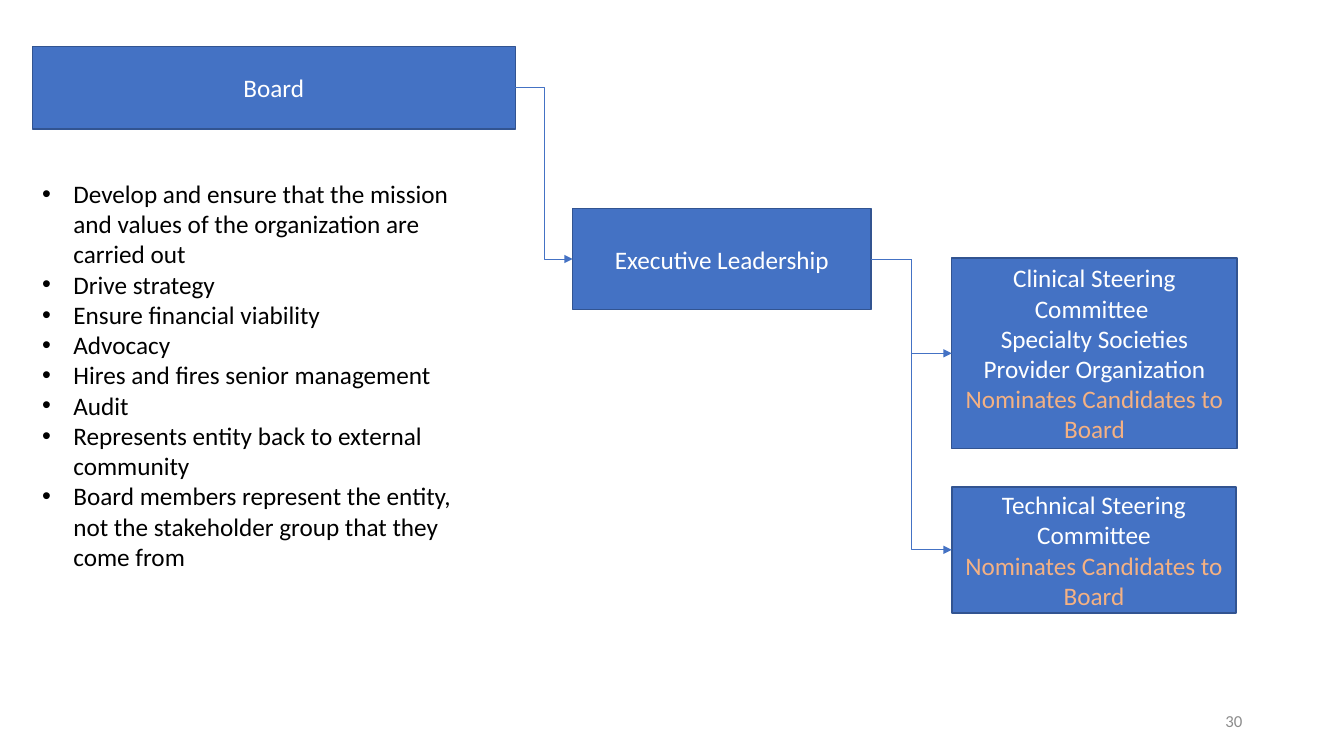
"""Builds a governance slide: board duties, executive leadership and committees."""
from lxml import etree
from pptx import Presentation
from pptx.dml.color import RGBColor
from pptx.enum.shapes import MSO_CONNECTOR, MSO_SHAPE
from pptx.enum.text import MSO_ANCHOR, PP_ALIGN
from pptx.oxml.ns import qn
from pptx.util import Inches, Pt

RECTANGLE = MSO_SHAPE.RECTANGLE
ELBOW = MSO_CONNECTOR.ELBOW
TOP, MIDDLE = MSO_ANCHOR.TOP, MSO_ANCHOR.MIDDLE
LEFT, CENTER, RIGHT = PP_ALIGN.LEFT, PP_ALIGN.CENTER, PP_ALIGN.RIGHT
LEFT_SITE, RIGHT_SITE = 1, 3

COLORS = {
    "box": "4472C4",
    "border": "325491",
    "label": "FFFFFF",
    "nomination": "F4B183",
    "body": "000000",
    "number": "8C8C8C",
}

NOMINATION = ("Nominates Candidates to Board", "nomination")

DUTIES = [
    "Develop and ensure that the mission and values of the organization are carried out",
    "Drive strategy",
    "Ensure financial viability",
    "Advocacy",
    "Hires and fires senior management",
    "Audit",
    "Represents entity back to external community",
    "Board members represent the entity, not the stakeholder group that they come from",
]


class SlideBuilder:
    def __init__(self, slide, font="Calibri", size=18):
        self.slide = slide
        self.font = font
        self.size = size

    def color(self, name):
        return RGBColor.from_string(COLORS[name])

    def add_lines(self, shape, lines, align, anchor, size=None, bullet=False):
        frame = shape.text_frame
        frame.word_wrap = True
        frame.vertical_anchor = anchor
        for index, (text, color) in enumerate(lines):
            paragraph = frame.add_paragraph() if index else frame.paragraphs[0]
            paragraph.alignment = align
            if bullet:
                self.add_bullet(paragraph)
            run = paragraph.add_run()
            run.text = text
            run.font.name = self.font
            run.font.size = Pt(size or self.size)
            run.font.color.rgb = self.color(color)

    def add_bullet(self, paragraph, indent=0.31):
        properties = paragraph._p.get_or_add_pPr()
        properties.set("marL", str(Inches(indent)))
        properties.set("indent", str(-Inches(indent)))
        etree.SubElement(properties, qn("a:buFont")).set("typeface", "Arial")
        etree.SubElement(properties, qn("a:buChar")).set("char", "•")

    def box(self, left, top, width, height, lines):
        shape = self.slide.shapes.add_shape(
            RECTANGLE, Inches(left), Inches(top), Inches(width), Inches(height))
        shape.shadow.inherit = False
        shape.fill.solid()
        shape.fill.fore_color.rgb = self.color("box")
        shape.line.color.rgb = self.color("border")
        shape.line.width = Pt(1)
        self.add_lines(shape, lines, CENTER, MIDDLE)
        return shape

    def text(self, left, top, width, height, lines, align=LEFT, anchor=TOP, **style):
        shape = self.slide.shapes.add_textbox(
            Inches(left), Inches(top), Inches(width), Inches(height))
        self.add_lines(shape, lines, align, anchor, **style)

    def arrow(self, source, target):
        connector = self.slide.shapes.add_connector(ELBOW, 0, 0, 0, 0)
        connector.begin_connect(source, RIGHT_SITE)
        connector.end_connect(target, LEFT_SITE)
        connector.line.color.rgb = self.color("box")
        connector.line.width = Pt(0.5)
        line = connector.line._get_or_add_ln()
        etree.SubElement(line, qn("a:tailEnd")).set("type", "triangle")
        etree.SubElement(connector._element.spPr, qn("a:effectLst"))


def main():
    presentation = Presentation()
    presentation.slide_width = Inches(13.33)
    presentation.slide_height = Inches(7.5)
    slide = presentation.slides.add_slide(presentation.slide_layouts[6])
    builder = SlideBuilder(slide)

    board = builder.box(0.32, 0.46, 4.79, 0.82, [("Board", "label")])
    executive = builder.box(5.68, 2.07, 2.96, 1, [("Executive Leadership", "label")])
    clinical = builder.box(9.44, 2.56, 2.83, 1.89, [
        ("Clinical Steering Committee ", "label"),
        ("Specialty Societies", "label"),
        ("Provider Organization", "label"),
        NOMINATION,
    ])
    technical = builder.box(9.44, 4.83, 2.82, 1.25, [
        ("Technical Steering Committee", "label"),
        NOMINATION,
    ])

    for source, target in [(board, executive), (executive, clinical), (executive, technical)]:
        builder.arrow(source, target)

    builder.text(0.32, 1.72, 4.37, 4.04, [(duty, "body") for duty in DUTIES], bullet=True)
    builder.text(9.42, 6.95, 3, 0.4, [("30", "number")], RIGHT, MIDDLE, size=12)

    presentation.save("out.pptx")


if __name__ == "__main__":
    main()
